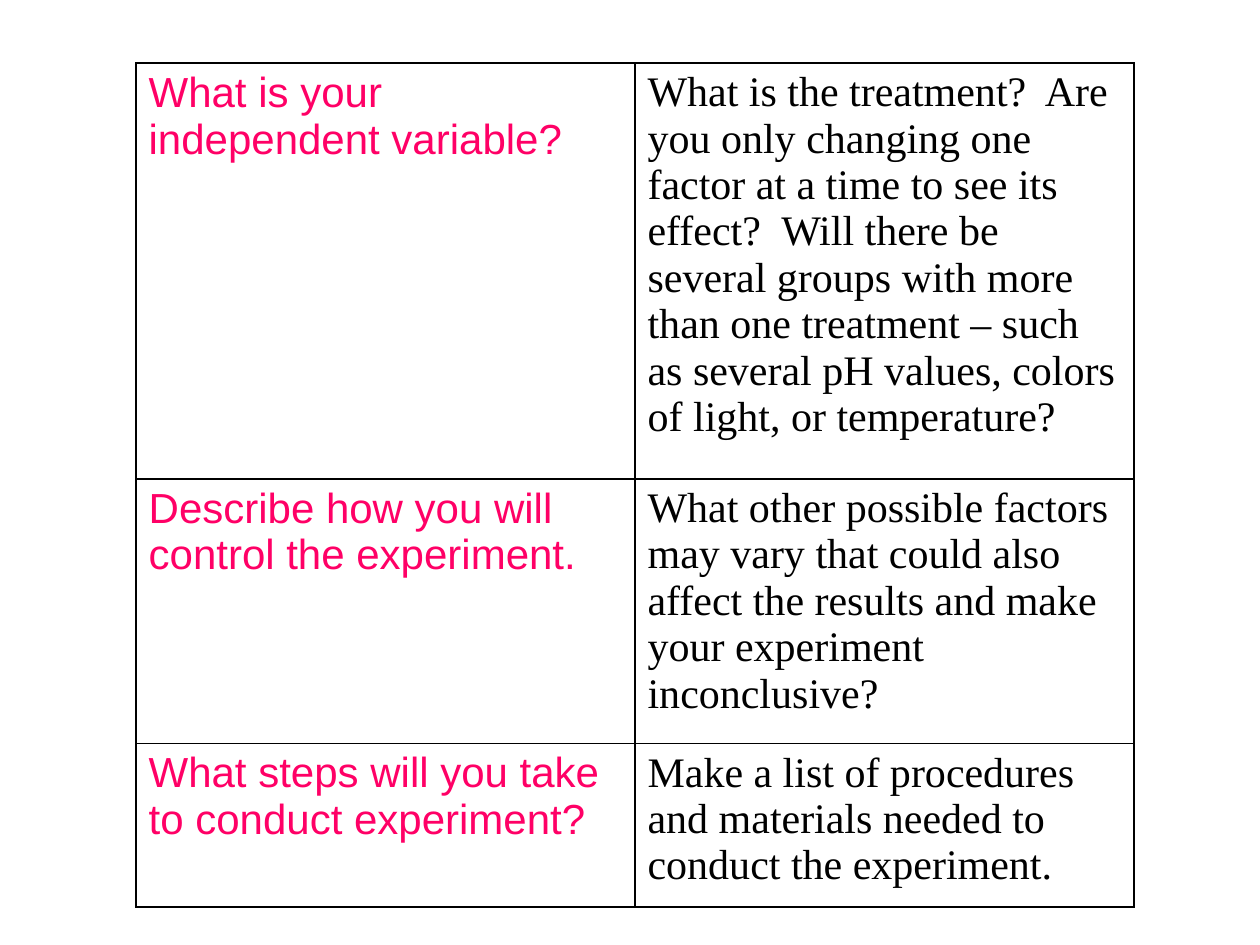
from pptx import Presentation, util as u
from pptx.dml.color import RGBColor
from pptx.oxml import parse_xml
from pptx.oxml.ns import nsdecls

ROWS = [
    (3.3, "What is your independent variable?",
     "What is the treatment?  Are you only changing one factor at a time to see its effect?  "
     "Will there be several groups with more than one treatment – such as several pH values, "
     "colors of light, or temperature?"),
    (2.1, "Describe how you will control the experiment.",
     "What other possible factors may vary that could also affect the results and make your "
     "experiment inconclusive?"),
    (1.3, "What steps will you take to conduct experiment?",
     "Make a list of procedures and materials needed to conduct the experiment."),
]
STYLES = [("Arial", "FF0066"), ("Times New Roman", "000000")]
LEFT, TOP, WIDTH = 1.08, 0.5, 7.92
EDGE = "000000"


def paint(part, color):
    part.rgb = RGBColor.from_string(color)


def frame(cell):
    props = cell._tc.get_or_add_tcPr()
    for place, side in enumerate(("lnL", "lnR", "lnT", "lnB")):
        props.insert(place, parse_xml(
            f'<a:{side} {nsdecls("a")} w="{u.Pt(1)}"><a:solidFill>'
            f'<a:srgbClr val="{EDGE}"/></a:solidFill></a:{side}>'))


def write(cell, words, font, color):
    cell.fill.background()
    frame(cell)
    run = cell.text_frame.paragraphs[0].add_run()
    run.text = words
    run.font.name = font
    run.font.size = u.Pt(24)
    run.font.bold = False
    paint(run.font.color, color)


def main():
    deck = Presentation()
    deck.slide_width, deck.slide_height = u.Inches(10), u.Inches(7.5)
    slide = deck.slides.add_slide(deck.slide_layouts[6])
    high = sum(row[0] for row in ROWS)
    grid = slide.shapes.add_table(
        len(ROWS), len(STYLES), u.Inches(LEFT), u.Inches(TOP),
        u.Inches(WIDTH), u.Inches(high)).table
    grid.first_row = grid.horz_banding = False
    for col in grid.columns:
        col.width = u.Inches(WIDTH / len(STYLES))
    for r, (tall, *texts) in enumerate(ROWS):
        grid.rows[r].height = u.Inches(tall)
        for c, (words, style) in enumerate(zip(texts, STYLES)):
            write(grid.cell(r, c), words, *style)
    deck.save("out.pptx")


if __name__ == "__main__":
    main()
